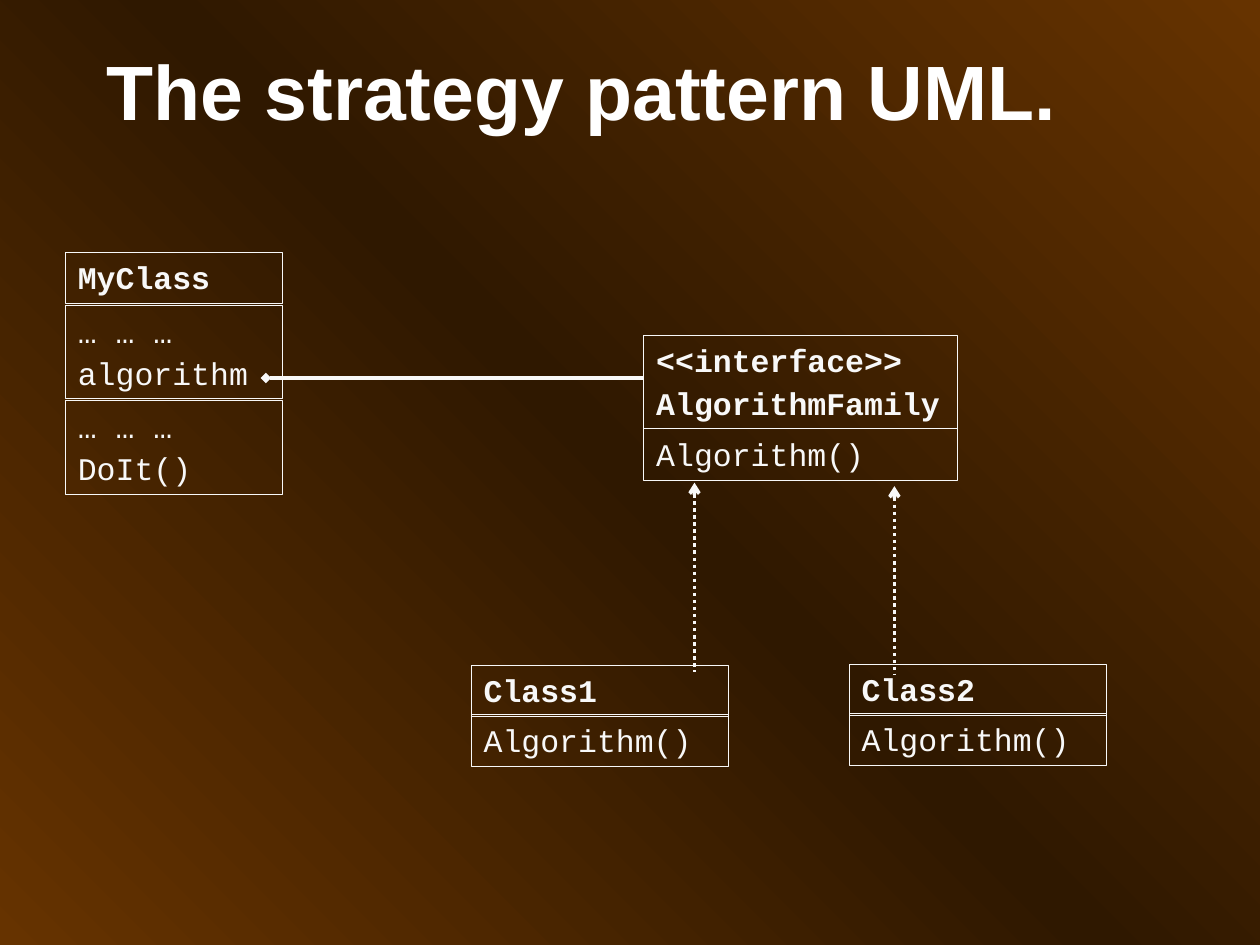
import copy

import pptx
import pptx.dml.color
import pptx.enum.dml
import pptx.enum.shapes
import pptx.enum.text
import pptx.oxml
import pptx.oxml.ns
import pptx.util

Cm = pptx.util.Cm
Pt = pptx.util.Pt
COLORS = {"edge": "663300", "middle": "2F1800", "title": "FFFFFF", "ink": "F8F8F8"}
LINE_HEIGHT = 0.84
ROW_PADDING = 0.2


def color(name):
    return pptx.dml.color.RGBColor.from_string(COLORS[name])


def paint_background(page):
    fill = page.background.fill
    fill.gradient()
    fill.gradient_angle = 45
    first = fill.gradient_stops[0]._gs
    first.addnext(copy.deepcopy(first))
    stops = (("edge", 0), ("middle", 0.5), ("edge", 1))
    for stop, (name, position) in zip(fill.gradient_stops, stops):
        stop.color.rgb = color(name)
        stop.position = position


def add_title(page, left, top, width, height, text):
    box = page.shapes.add_textbox(Cm(left), Cm(top), Cm(width), Cm(height))
    frame = box.text_frame
    frame.word_wrap = True
    frame.vertical_anchor = pptx.enum.text.MSO_ANCHOR.MIDDLE
    para = frame.paragraphs[0]
    para.text = text
    para.font.name = "Arial"
    para.font.size = Pt(44)
    para.font.bold = True
    para.font.color.rgb = color("title")


def add_class(page, left, top, width, gap, sections):
    group = page.shapes.add_group_shape()
    for index, lines in enumerate(sections):
        height = ROW_PADDING + LINE_HEIGHT * len(lines)
        box = group.shapes.add_shape(
            pptx.enum.shapes.MSO_SHAPE.RECTANGLE,
            Cm(left), Cm(top), Cm(width), Cm(height))
        box.shadow.inherit = False
        box.fill.background()
        box.line.color.rgb = color("ink")
        box.line.width = Pt(0.5)
        frame = box.text_frame
        frame.word_wrap = True
        frame.vertical_anchor = pptx.enum.text.MSO_ANCHOR.TOP
        for number, line in enumerate(lines):
            para = frame.add_paragraph() if number else frame.paragraphs[0]
            para.text = line
            para.alignment = pptx.enum.text.PP_ALIGN.LEFT
            para.space_before = Pt(2.5)
            para.font.name = "Courier New"
            para.font.size = Pt(18)
            para.font.bold = index == 0
            para.font.color.rgb = color("ink")
        top += height + gap


def add_relation(page, start, end, head, dash=None):
    relation = page.shapes.add_connector(
        pptx.enum.shapes.MSO_CONNECTOR.STRAIGHT,
        *(Cm(value) for value in start + end))
    relation.line.color.rgb = color("ink")
    relation.line.width = Pt(2)
    if dash:
        relation.line.dash_style = dash
    namespace = pptx.oxml.ns.nsdecls("a")
    relation.line._get_or_add_ln().append(
        pptx.oxml.parse_xml(f'<a:headEnd {namespace} type="{head}"/>'))
    relation._element.spPr.append(pptx.oxml.parse_xml(f"<a:effectLst {namespace}/>"))


def add_diagram(page, left, top):
    dotted = pptx.enum.dml.MSO_LINE.ROUND_DOT
    add_class(page, left, top, 4.37, 0.04,
              [["MyClass"], ["… … …", "algorithm"], ["… … …", "DoIt()"]])
    add_class(page, left + 11.66, top + 1.68, 6.32, 0,
              [["<<interface>>", "AlgorithmFamily"], ["Algorithm()"]])
    for x, y in ((12.68, 4.65), (16.71, 4.72)):
        add_relation(page, (left + x, top + y), (left + x, top + y + 3.81),
                     "arrow", dotted)
    add_relation(page, (left + 4.04, top + 2.54), (left + 11.66, top + 2.54), "diamond")
    for name, x, y in (("Class2", 15.8, 8.31), ("Class1", 8.18, 8.33)):
        add_class(page, left + x, top + y, 5.18, -0.04, [[name], ["Algorithm()"]])


def main():
    deck = pptx.Presentation()
    deck.slide_width, deck.slide_height = Cm(25.4), Cm(19.05)
    page = deck.slides.add_slide(deck.slide_layouts[6])
    paint_background(page)
    add_title(page, 1.9, 0.64, 21.6, 2.34, "The strategy pattern UML.")
    add_diagram(page, 1.32, 5.08)
    deck.save("out.pptx")


if __name__ == "__main__":
    main()
